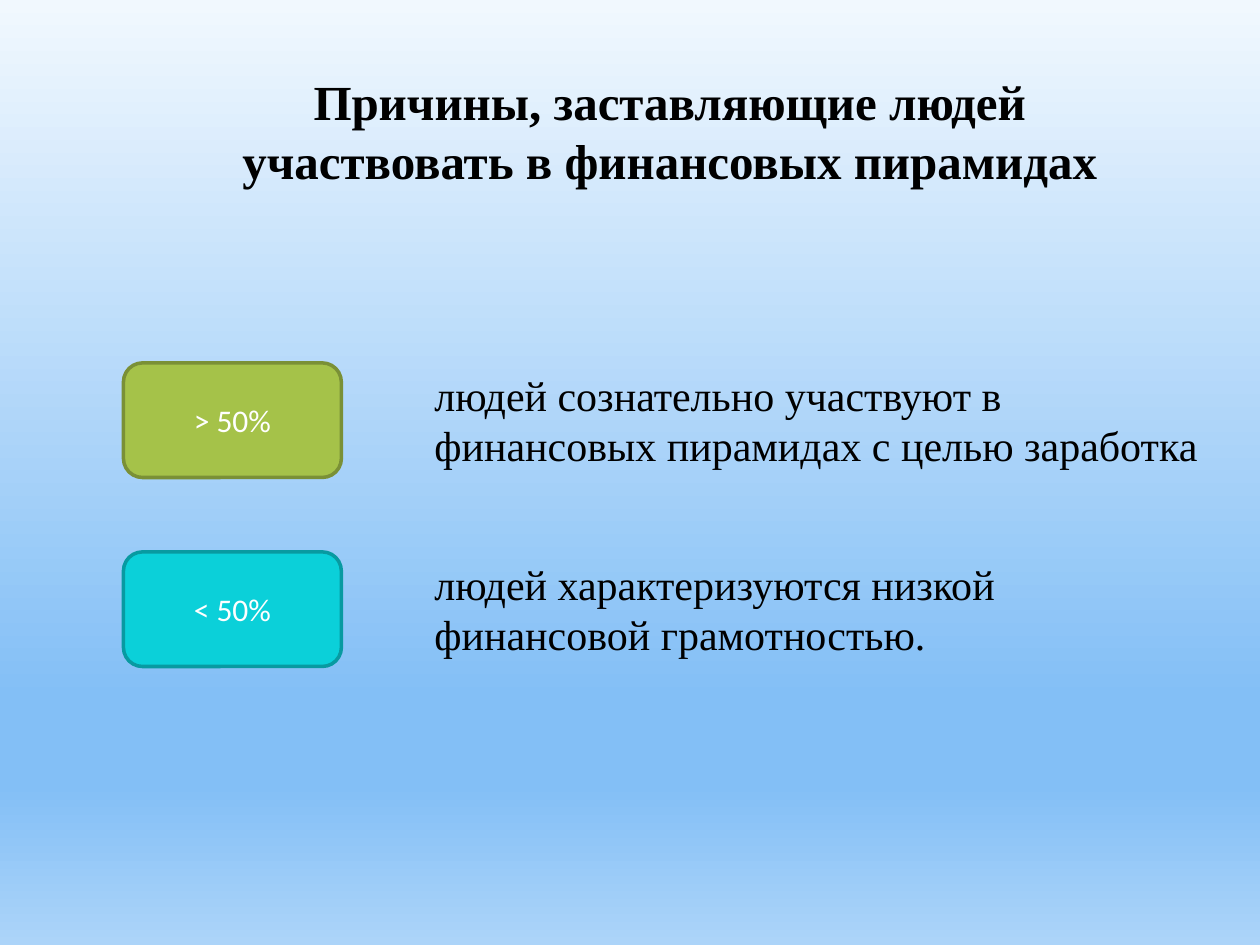
"""Build a slide on why people take part in financial pyramids."""
import copy

import pptx
import pptx.dml.color
import pptx.enum.shapes
import pptx.enum.text
import pptx.oxml.ns
import pptx.util

RGBColor = pptx.dml.color.RGBColor
Inches = pptx.util.Inches
BLACK = RGBColor(0x00, 0x00, 0x00)
WHITE = RGBColor(0xFF, 0xFF, 0xFF)
GREEN = RGBColor(0xA5, 0xC2, 0x49)
DARK_GREEN = RGBColor(0x7A, 0x90, 0x36)
CYAN = RGBColor(0x0B, 0xD0, 0xD9)
DARK_CYAN = RGBColor(0x08, 0x9A, 0xA1)
PALE_BLUE = RGBColor(0xF1, 0xF8, 0xFE)
MID_BLUE = RGBColor(0x83, 0xBF, 0xF6)
LIGHT_BLUE = RGBColor(0xAC, 0xD4, 0xF9)

BADGE_LEFT, BADGE_WIDTH = Inches(0.98), Inches(1.73)
REASON_LEFT, REASON_WIDTH = Inches(3.35), Inches(6.3)
FIRST_ROW, ROW_STEP, ROW_HEIGHT = Inches(2.88), Inches(1.5), Inches(0.91)


def format_text(shape, text, font_name, size, color, alignment, anchor):
    frame = shape.text_frame
    frame.word_wrap = True
    frame.auto_size = pptx.enum.text.MSO_AUTO_SIZE.NONE
    frame.vertical_anchor = anchor
    paragraph = frame.paragraphs[0]
    paragraph.text = text
    paragraph.alignment = alignment
    paragraph.font.name = font_name
    paragraph.font.size = pptx.util.Pt(size)
    paragraph.font.color.rgb = color
    return paragraph


LEFT = pptx.enum.text.PP_ALIGN.LEFT
CENTER = pptx.enum.text.PP_ALIGN.CENTER
TOP = pptx.enum.text.MSO_ANCHOR.TOP
MIDDLE = pptx.enum.text.MSO_ANCHOR.MIDDLE

presentation = pptx.Presentation()
presentation.slide_width = Inches(10)
presentation.slide_height = Inches(7.5)
slide = presentation.slides.add_slide(presentation.slide_layouts[5])

background = slide.background.fill
background.gradient()
background.gradient_angle = 270
stop_list = slide.element.find(".//" + pptx.oxml.ns.qn("a:gsLst"))
for _ in range(2):
    stop_list.append(copy.deepcopy(stop_list[0]))
stops = [(0, PALE_BLUE), (0.74, MID_BLUE), (0.83, MID_BLUE), (1, LIGHT_BLUE)]
for stop, (position, color) in zip(background.gradient_stops, stops):
    stop.position = position
    stop.color.rgb = color

title = slide.shapes.title
title.left, title.top = Inches(1.3), Inches(0.52)
title.width, title.height = Inches(8.03), Inches(1.04)
heading = format_text(
    title, "Причины, заставляющие людей участвовать в финансовых пирамидах",
    "Times New Roman", 28, BLACK, CENTER, TOP)
heading.font.bold = True

reasons = [
    ("> 50%", GREEN, DARK_GREEN,
     "людей сознательно участвуют в финансовых пирамидах с целью заработка"),
    ("< 50%", CYAN, DARK_CYAN,
     "людей характеризуются низкой финансовой грамотностью."),
]
for row, (share, fill_color, line_color, reason) in enumerate(reasons):
    row_top = FIRST_ROW + row * ROW_STEP
    badge = slide.shapes.add_shape(
        pptx.enum.shapes.MSO_SHAPE.ROUNDED_RECTANGLE,
        BADGE_LEFT, row_top, BADGE_WIDTH, ROW_HEIGHT)
    badge.shadow.inherit = False
    badge.fill.solid()
    badge.fill.fore_color.rgb = fill_color
    badge.line.color.rgb = line_color
    badge.line.width = pptx.util.Pt(2)
    format_text(badge, share, "Calibri", 18, WHITE, CENTER, MIDDLE)

    reason_box = slide.shapes.add_textbox(
        REASON_LEFT, row_top, REASON_WIDTH, ROW_HEIGHT)
    format_text(reason_box, reason, "Times New Roman", 24, BLACK, LEFT, TOP)

presentation.save("out.pptx")
